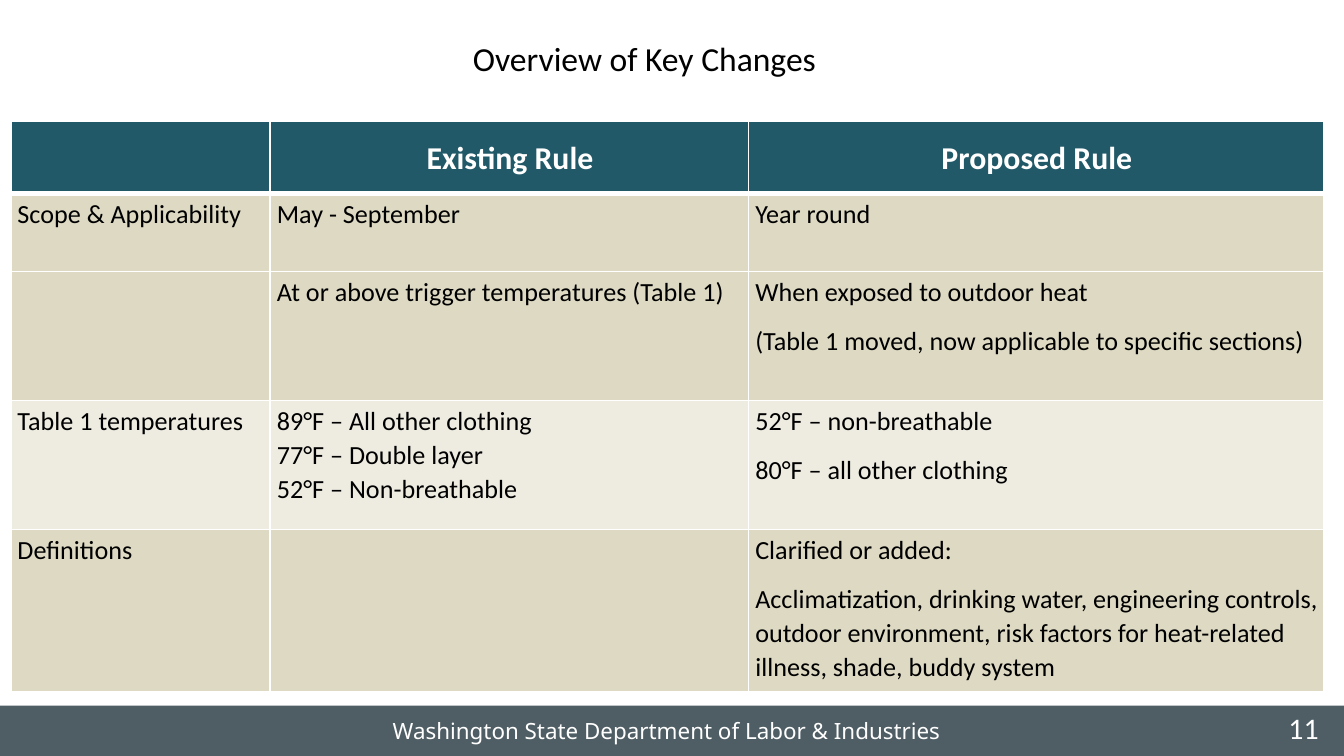
from dataclasses import dataclass

from lxml import etree
from pptx import Presentation
from pptx.dml.color import RGBColor
from pptx.enum.shapes import MSO_SHAPE
from pptx.enum.text import MSO_ANCHOR, PP_ALIGN
from pptx.oxml.ns import qn
from pptx.util import Inches, Pt

LEFT, CENTER, RIGHT = PP_ALIGN.LEFT, PP_ALIGN.CENTER, PP_ALIGN.RIGHT
TOP, MIDDLE = MSO_ANCHOR.TOP, MSO_ANCHOR.MIDDLE
RECTANGLE = MSO_SHAPE.RECTANGLE


@dataclass(frozen=True)
class Theme:
    font: str = "Calibri"
    footer_font: str = "Noto Sans"
    white: str = "FFFFFF"
    black: str = "000000"
    footer: str = "4F5E64"
    header: str = "215968"
    tan: str = "DDD9C3"
    cream: str = "EEECE1"
    title_size: int = 18
    header_size: int = 17
    body_size: int = 14
    footer_size: int = 12
    number_size: int = 16


theme = Theme()


def write(frame, lines, size, color, align=LEFT, font=theme.font, bold=False,
          spacing=1.0, after=0):
    for index, line in enumerate(lines):
        para = frame.paragraphs[0] if index == 0 else frame.add_paragraph()
        para.alignment = align
        para.line_spacing = spacing
        para.space_after = Pt(after)
        span = para.add_run()
        span.text = line
        span.font.name = font
        span.font.size = Pt(size)
        span.font.bold = bold
        span.font.color.rgb = RGBColor.from_string(color)


def set_borders(cell, color, top_width, bottom_width):
    properties = cell._tc.get_or_add_tcPr()
    widths = {"lnL": 1, "lnR": 1, "lnT": top_width, "lnB": bottom_width}
    for position, (side, width) in enumerate(widths.items()):
        line = etree.Element(qn(f"a:{side}"), w=str(Pt(width)))
        fill = etree.SubElement(line, qn("a:solidFill"))
        etree.SubElement(fill, qn("a:srgbClr"), val=color)
        properties.insert(position, line)


deck = Presentation()
deck.slide_width = Inches(10)
deck.slide_height = Inches(10 * 9 / 16)
page = deck.slides.add_slide(deck.slide_layouts[6])

# Footer band
band_top = Inches(5.25)
band = page.shapes.add_shape(RECTANGLE, Inches(0), band_top,
                             deck.slide_width, deck.slide_height - band_top)
band.shadow.inherit = False
band.fill.solid()
band.fill.fore_color.rgb = RGBColor.from_string(theme.footer)
band.line.fill.background()

box = page.shapes.add_textbox(Inches(0.5), Inches(5.23), Inches(8.92), Inches(0.34))
box.text_frame.word_wrap = True
write(box.text_frame, ["Washington State Department of Labor & Industries"],
      theme.footer_size, theme.white, CENTER, theme.footer_font, spacing=1.3)

box = page.shapes.add_textbox(Inches(9.33), Inches(5.23), Inches(0.58), Inches(0.37))
box.text_frame.word_wrap = True
write(box.text_frame, ["11"], theme.number_size, theme.white, RIGHT)

# Title
box = page.shapes.add_textbox(Inches(3.42), Inches(0.23), Inches(2.79), Inches(0.4))
box.text_frame.word_wrap = False
write(box.text_frame, ["Overview of Key Changes"], theme.title_size, theme.black)

# Comparison table: row height, fill, then the lines of each cell
column_widths = [1.93, 3.56, 4.28]
rows = [
    (0.54, theme.header, [[], ["Existing Rule"], ["Proposed Rule"]]),
    (0.58, theme.tan, [["Scope & Applicability"], ["May - September"], ["Year round"]]),
    (0.96, theme.tan, [
        [],
        ["At or above trigger temperatures (Table 1)"],
        ["When exposed to outdoor heat",
         "(Table 1 moved, now applicable to specific sections)"],
    ]),
    (0.96, theme.cream, [
        ["Table 1 temperatures"],
        ["89°F – All other clothing", "77°F – Double layer", "52°F – Non-breathable"],
        ["52°F – non-breathable", "80°F – all other clothing"],
    ]),
    (1.21, theme.tan, [
        ["Definitions"],
        [],
        ["Clarified or added:",
         "Acclimatization, drinking water, engineering controls, outdoor environment, "
         "risk factors for heat-related illness, shade, buddy system"],
    ]),
]
table = page.shapes.add_table(
    len(rows), len(column_widths), Inches(0.08), Inches(0.9),
    Inches(sum(column_widths)), Inches(sum(row[0] for row in rows))).table
for column, width in zip(table.columns, column_widths):
    column.width = Inches(width)

for row_index, (height, fill, cells) in enumerate(rows):
    table.rows[row_index].height = Inches(height)
    is_header = row_index == 0
    for column_index, lines in enumerate(cells):
        cell = table.cell(row_index, column_index)
        cell.margin_left = Inches(0.05)
        cell.margin_right = Inches(0.04)
        cell.margin_top = cell.margin_bottom = Inches(0.02)
        cell.vertical_anchor = MIDDLE if is_header else TOP
        cell.fill.solid()
        cell.fill.fore_color.rgb = RGBColor.from_string(fill)
        # A thick rule parts the header from the body
        set_borders(cell, theme.white, 3 if row_index == 1 else 1, 3 if is_header else 1)
        if is_header:
            write(cell.text_frame, lines, theme.header_size, theme.white, CENTER,
                  bold=True, spacing=1.07, after=8)
        else:
            # The three-line temperature list is set tight
            write(cell.text_frame, lines, theme.body_size, theme.black,
                  spacing=1.07, after=0 if len(lines) == 3 else 8)

deck.save("out.pptx")
